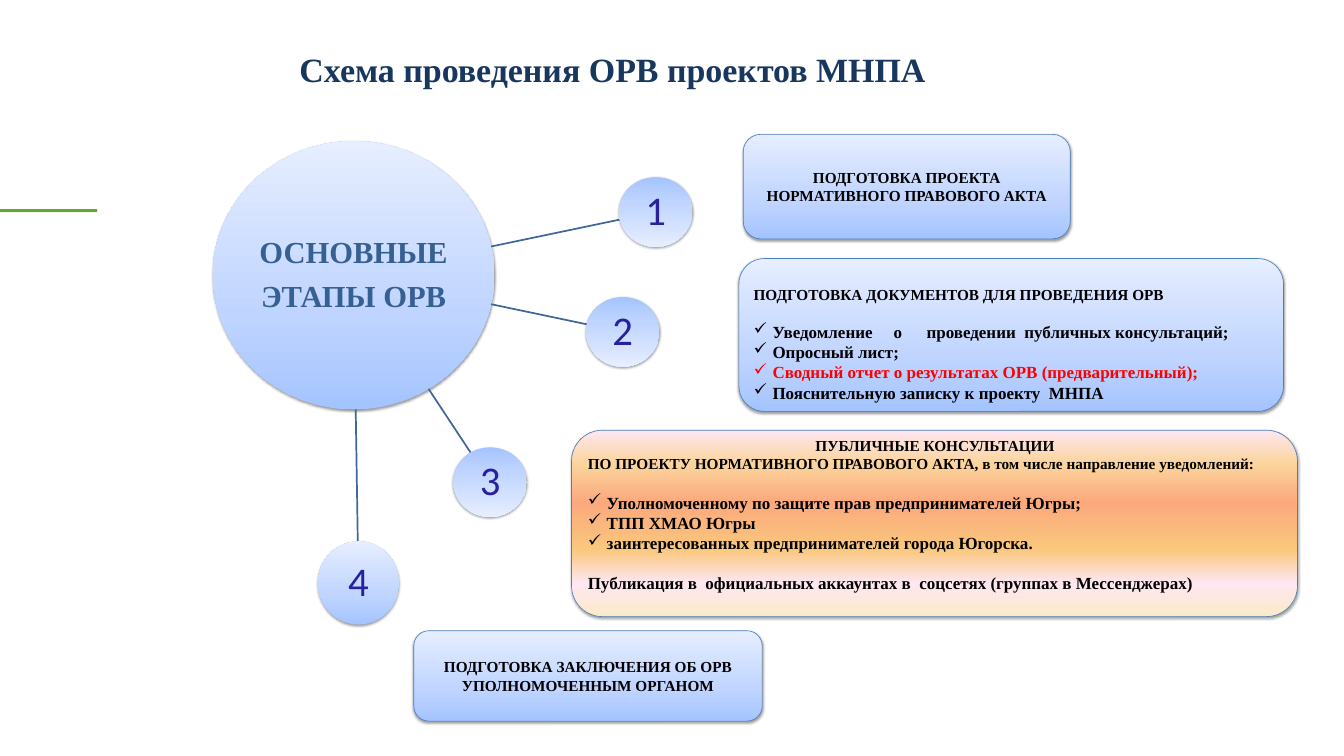
from math import hypot
from lxml.etree import SubElement
from pptx import Presentation
from pptx.dml.color import RGBColor
from pptx.enum.shapes import MSO_CONNECTOR as CONN, MSO_SHAPE as SHAPE
from pptx.enum.text import MSO_ANCHOR as ANCHOR, MSO_AUTO_SIZE as AUTO, PP_ALIGN as ALIGN
from pptx.oxml.ns import qn
from pptx.util import Inches, Pt

W, H = Inches(21.99), Inches(12.37)
SERIF = "Times New Roman"
BLUE = [(0, "A4C4FF"), (35, "BFD4FF"), (100, "E6EEFF")]
ORANGE = [(0, "FBEAC7"), (18, "FEE7F2"), (36, "FAC77D"),
          (61, "FBA97D"), (82, "FBD49C"), (100, "FEE7F2")]
BLACK, RED, EDGE, LINK = "000000", "FF0000", "4B7EBC", "3F6797"
TABS = (0.33, 2.31, 2.85)

TITLE = "Схема проведения ОРВ проектов МНПА"
TITLE_AREA = (22.28, 6.39, 57.89, 10.91)
BAR = (0, 27.65, 7.23, 0.4)

HUB = (26.31, 36.42, 20.96, 35.49)
HUB_LINES = ["ОСНОВНЫЕ", "ЭТАПЫ ОРВ"]
STEPS = [
    ("1", (48.79, 28.05, 5.46, 9.22), -90),
    ("2", (46.34, 43.9, 5.46, 9.22), -90),
    ("3", (36.47, 63.78, 5.46, 9.22), -90),
    ("4", (26.67, 77.12, 6.05, 10.99), 90),
]

# kind: "c" centred, "l" left, "b" bulleted
BOXES = [
    ((55.3, 17.78, 24.33, 13.82), BLUE, (0.05, 0.05), [
        ("c", "ПОДГОТОВКА ПРОЕКТА НОРМАТИВНОГО ПРАВОВОГО АКТА", 18, 0, BLACK)]),
    ((54.98, 34.2, 40.52, 20.21), BLUE, (0.29, 0), [
        ("l", "ПОДГОТОВКА ДОКУМЕНТОВ ДЛЯ ПРОВЕДЕНИЯ ОРВ", 18, 0, BLACK),
        ("b", "Уведомление\tо\tпроведении  публичных консультаций;", 20, 21, BLACK),
        ("b", "Опросный лист;", 20, 0, BLACK),
        ("b", "Сводный отчет о результатах ОРВ (предварительный);", 20, 0, RED),
        ("b", "Пояснительную записку к проекту  МНПА", 20, 0, BLACK)]),
    ((42.52, 56.91, 54.02, 24.66), ORANGE, (0, 0.29), [
        ("c", "ПУБЛИЧНЫЕ КОНСУЛЬТАЦИИ", 18, 0, BLACK),
        ("l", "ПО ПРОЕКТУ НОРМАТИВНОГО ПРАВОВОГО АКТА, "
              "в том числе направление уведомлений:", 18, 0, BLACK),
        ("b", "Уполномоченному по защите прав предпринимателей Югры;", 20, 23, BLACK),
        ("b", "ТПП ХМАО Югры", 20, 0, BLACK),
        ("b", "заинтересованных предпринимателей города Югорска.", 20, 0, BLACK),
        ("l", "Публикация в  официальных аккаунтах в  соцсетях "
              "(группах в Мессенджерах)", 20, 23, BLACK)]),
    ((30.79, 83.43, 25.92, 11.96), BLUE, (0.05, 0.05), [
        ("c", "ПОДГОТОВКА ЗАКЛЮЧЕНИЯ ОБ ОРВ УПОЛНОМОЧЕННЫМ ОРГАНОМ",
         18, 0, BLACK)]),
]


def rgb(value):
    return RGBColor.from_string(value)


def area(share):
    x, y, w, h = share
    return [int(v / 100) for v in (x * W, y * H, w * W, h * H)]


def around(share):
    x, y, w, h = share
    return x - w / 2, y - h / 2, w, h


def add_color(parent, value):
    return SubElement(parent, qn("a:srgbClr"), val=value)


def shaded(kind, share, stops, angle):
    sp = shapes.add_shape(kind, *area(share))
    sp.fill.gradient()
    sp.fill.gradient_angle = angle % 360
    gs_list = sp._element.spPr.find(qn("a:gradFill")).find(qn("a:gsLst"))
    for gs in list(gs_list):
        gs_list.remove(gs)
    for pos, value in stops:
        add_color(SubElement(gs_list, qn("a:gs"), pos=str(pos * 1000)), value)
    sp.line.fill.background()
    sp.shadow.inherit = False
    effects = sp._element.spPr.find(qn("a:effectLst"))
    shadow = SubElement(effects, qn("a:outerShdw"), blurRad=str(Pt(3.1)),
                        dist=str(Pt(1.6)), dir="5400000", rotWithShape="0")
    SubElement(add_color(shadow, BLACK), qn("a:alpha"), val="38000")
    sp.text_frame.vertical_anchor = ANCHOR.MIDDLE
    return sp


def style(p, size, value, font=SERIF, bold=True):
    for r in p.runs:
        r.font.name, r.font.size, r.font.bold = font, Pt(size), bold
        r.font.color.rgb = rgb(value)


def paragraphs(tf, count):
    return [tf.paragraphs[0]] + [tf.add_paragraph() for _ in range(count - 1)]


def circle(share, lines, angle, size, value, font, bold):
    sp = shaded(SHAPE.OVAL, around(share), BLUE, angle)
    tf = sp.text_frame
    tf.margin_left = tf.margin_right = tf.margin_top = tf.margin_bottom = Inches(0.03)
    for i, (p, text) in enumerate(zip(paragraphs(tf, len(lines)), lines)):
        p.text, p.alignment, p.line_spacing = text, ALIGN.CENTER, 0.9
        if i:
            p.space_before = Pt(size * 0.35)
        style(p, size, value, font, bold)


def edge_point(share, other):
    x, y, w, h = area(share)
    x2, y2 = area(other)[:2]
    dx, dy = x2 - x, y2 - y
    t = 1 / hypot(dx / (w / 2), dy / (h / 2))
    return int(x + dx * t), int(y + dy * t)


def link(start, end):
    line = shapes.add_connector(CONN.STRAIGHT, *edge_point(start, end),
                                *edge_point(end, start))
    line.line.color.rgb, line.line.width = rgb(LINK), Pt(2)
    SubElement(line._element.spPr, qn("a:effectLst"))


def indent(p, bulleted):
    pPr = p._p.get_or_add_pPr()
    pPr.set("marL", str(Inches(0.33)))
    pPr.set("indent", str(Inches(-0.31)))
    if bulleted:
        SubElement(pPr, qn("a:buChar"), char="✓")
    tabs = SubElement(pPr, qn("a:tabLst"))
    for pos in TABS:
        SubElement(tabs, qn("a:tab"), pos=str(Inches(pos)), algn="l")


def box(share, stops, margins, lines):
    sp = shaded(SHAPE.ROUNDED_RECTANGLE, share, stops, 90)
    sp.line.color.rgb, sp.line.width = rgb(EDGE), Pt(0.75)
    tf = sp.text_frame
    tf.word_wrap = True
    tf.margin_top, tf.margin_bottom = map(Inches, margins)
    for p, (kind, text, size, gap, value) in zip(paragraphs(tf, len(lines)), lines):
        p.text = text
        if len(lines) > 1:
            indent(p, kind == "b")
        p.alignment = ALIGN.CENTER if kind == "c" else ALIGN.LEFT
        if gap:
            p.space_before = Pt(gap)
        style(p, size, value)


prs = Presentation()
prs.slide_width, prs.slide_height = W, H
slide = prs.slides.add_slide(prs.slide_layouts[5])
shapes = slide.shapes

title = shapes.title
title.left, title.top, title.width, title.height = area(TITLE_AREA)
tf = title.text_frame
tf.text = TITLE
tf.auto_size, tf.vertical_anchor = AUTO.NONE, ANCHOR.TOP
tf.margin_left = tf.margin_right = tf.margin_top = tf.margin_bottom = 0
tf.paragraphs[0].alignment = ALIGN.LEFT
style(tf.paragraphs[0], 40, "17375E")

bar = shapes.add_shape(SHAPE.RECTANGLE, *area(BAR))
bar.fill.solid()
bar.fill.fore_color.rgb = rgb("66A82F")
bar.line.fill.background()
bar.shadow.inherit = False

circle(HUB, HUB_LINES, 90, 36, "376092", SERIF, True)
for number, share, angle in STEPS:
    link(HUB, share)
    circle(share, [number], angle, 48, "27219F", "Calibri", False)
for content in BOXES:
    box(*content)

prs.save("out.pptx")
